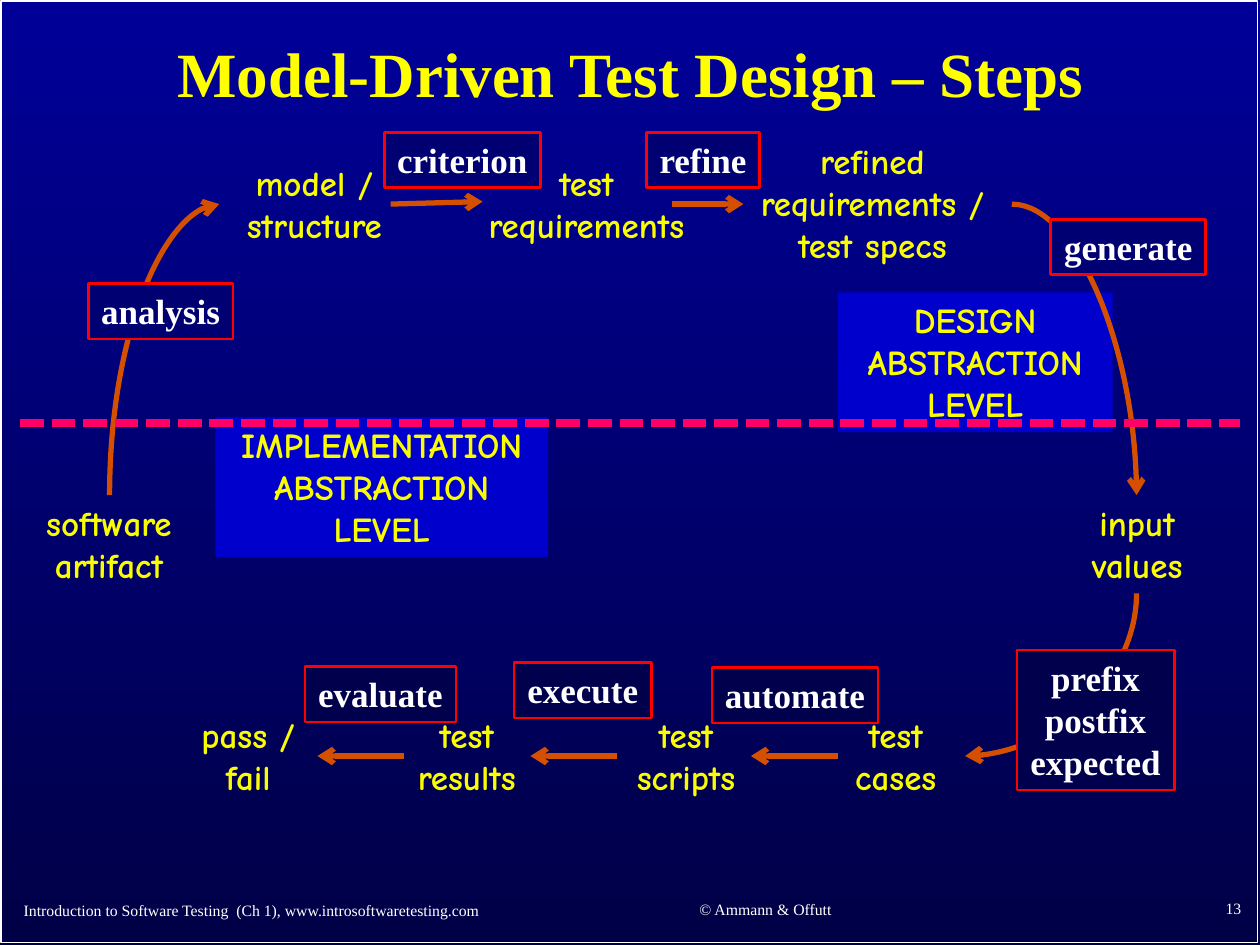
from dataclasses import dataclass

from lxml.etree import SubElement
from pptx import Presentation
from pptx.dml.color import RGBColor
from pptx.enum.dml import MSO_LINE_DASH_STYLE as Dash
from pptx.enum.shapes import MSO_CONNECTOR as Link, MSO_SHAPE as Preset
from pptx.enum.text import MSO_ANCHOR as Anchor, MSO_AUTO_SIZE as AutoSize, PP_ALIGN as Align
from pptx.oxml.ns import qn
from pptx.util import Inches, Pt


@dataclass(frozen=True)
class TextStyle:
    font: str
    size: float
    color: str
    bold: bool = True


@dataclass(frozen=True)
class Theme:
    sky_top: str = "000099"
    sky_bottom: str = "000047"
    white: str = "FFFFFF"
    arrow: str = "D45000"
    divider: str = "FF0066"
    level_fill: str = "0000CC"
    step_line: str = "FF0000"
    step_upper: str = "000073"
    step_lower: str = "00004C"
    title: TextStyle = TextStyle("Times New Roman", 36, "FFFF00")
    footer: TextStyle = TextStyle("Times New Roman", 9, "FFFFFF", False)
    artifact: TextStyle = TextStyle("Comic Neue", 20, "FAFD00")
    step: TextStyle = TextStyle("Times New Roman", 20, "FFFFFF")


@dataclass(frozen=True)
class Label:
    lines: tuple[str, ...]
    left: float
    top: float
    width: float
    height: float


@dataclass(frozen=True)
class Arrow:
    start: tuple[float, float]
    end: tuple[float, float]


THEME = Theme()
UPPER_FLOW, LOWER_FLOW = 1.62, 6.0
MIDDLE_TOP, LOWER_TOP = 3.93, 5.61
TWO_LINES, THREE_LINES, ONE_LINE = 0.77, 1.11, 0.44

ARTIFACTS = [
    Label(("software artifact",), 0.11, MIDDLE_TOP, 1.51, TWO_LINES),
    Label(("model / structure",), 1.74, 1.23, 1.51, TWO_LINES),
    Label(("test requirements",), 3.67, 1.23, 1.97, TWO_LINES),
    Label(("refined requirements / test specs",), 5.82, 1.06, 2.21, THREE_LINES),
    Label(("input values",), 8.27, MIDDLE_TOP, 1.51, TWO_LINES),
    Label(("test cases",), 6.56, LOWER_TOP, 1.1, TWO_LINES),
    Label(("test scripts",), 4.82, LOWER_TOP, 1.25, TWO_LINES),
    Label(("test results",), 3.08, LOWER_TOP, 1.25, TWO_LINES),
    Label(("pass / fail",), 1.35, LOWER_TOP, 1.24, TWO_LINES),
]
LEVELS = [
    Label(("IMPLEMENTATION", "ABSTRACTION", "LEVEL"), 1.71, 3.31, 2.64, THREE_LINES),
    Label(("DESIGN", "ABSTRACTION", "LEVEL"), 6.65, 2.32, 2.18, THREE_LINES),
]
UPPER_STEPS = [
    Label(("analysis",), 0.7, 2.25, 1.15, ONE_LINE),
    Label(("criterion",), 3.05, 1.05, 1.24, ONE_LINE),
    Label(("refine",), 5.13, 1.05, 0.9, ONE_LINE),
    Label(("generate",), 8.34, 1.74, 1.23, ONE_LINE),
]
LOWER_STEPS = [
    Label(("prefix", "postfix", "expected"), 8.07, 5.16, 1.25, THREE_LINES),
    Label(("automate",), 5.65, 5.3, 1.32, ONE_LINE),
    Label(("execute",), 4.08, 5.26, 1.09, ONE_LINE),
    Label(("evaluate",), 2.42, 5.29, 1.2, ONE_LINE),
]
STRAIGHT_ARROWS = [
    Arrow((3.1, UPPER_FLOW), (3.83, 1.6)),
    Arrow((5.33, UPPER_FLOW), (5.9, UPPER_FLOW)),
] + [Arrow((x, LOWER_FLOW), (x - 0.69, LOWER_FLOW)) for x in (3.21, 4.9, 6.65)]
ANALYSIS_ARROW = Arrow((0.87, MIDDLE_TOP), (1.74, UPPER_FLOW))
GENERATE_ARROW = Arrow((8.03, UPPER_FLOW), (9.02, MIDDLE_TOP))
PREFIX_ARROW = Arrow((9.02, 4.71), (7.66, LOWER_FLOW))
FOOTERS = [
    (Label(("Introduction to Software Testing  (Ch 1), www.introsoftwaretesting.com",),
           0.09, 7.03, 4.2, 0.38), Align.LEFT),
    (Label(("© Ammann & Offutt",), 4.49, 7.02, 3.17, 0.39), Align.CENTER),
    (Label(("13",), 7.87, 7.01, 2.08, 0.4), Align.RIGHT),
]


def rgb(color: str) -> RGBColor:
    return RGBColor.from_string(color)


def write(box, lines: tuple[str, ...], style: TextStyle, align=Align.CENTER,
          anchor=Anchor.TOP, wrap: bool = True, grow: bool = False, spacing: float = 1.0) -> None:
    frame = box.text_frame
    frame.word_wrap = wrap
    frame.vertical_anchor = anchor
    frame.auto_size = AutoSize.SHAPE_TO_FIT_TEXT if grow else AutoSize.NONE
    for index, line in enumerate(lines):
        para = frame.add_paragraph() if index else frame.paragraphs[0]
        para.alignment = align
        para.line_spacing = spacing
        span = para.add_run()
        span.text = line
        span.font.name = style.font
        span.font.size = Pt(style.size)
        span.font.bold = style.bold
        span.font.color.rgb = rgb(style.color)


def add_text(page, label: Label, style: TextStyle, **layout) -> None:
    box = page.shapes.add_textbox(Inches(label.left), Inches(label.top),
                                  Inches(label.width), Inches(label.height))
    write(box, label.lines, style, **layout)


def add_box(page, label: Label, style: TextStyle, fill: str | None = None,
            line: str | None = None, weight: float = 1.5) -> None:
    box = page.shapes.add_shape(Preset.RECTANGLE, Inches(label.left), Inches(label.top),
                                Inches(label.width), Inches(label.height))
    box.shadow.inherit = False
    if fill:
        box.fill.solid()
        box.fill.fore_color.rgb = rgb(fill)
    else:
        box.fill.background()
    if line:
        box.line.color.rgb = rgb(line)
        box.line.width = Pt(weight)
    else:
        box.line.fill.background()
    if label.lines:
        write(box, label.lines, style, wrap=False, grow=True)


def add_link(page, arrow: Arrow, color: str, weight: float, kind=Link.STRAIGHT):
    link = page.shapes.add_connector(kind, *(Inches(v) for v in arrow.start + arrow.end))
    link.line.color.rgb = rgb(color)
    link.line.width = Pt(weight)
    SubElement(link.element.spPr, qn("a:effectLst"))
    return link


def add_arrow(page, arrow: Arrow, kind=Link.STRAIGHT):
    link = add_link(page, arrow, THEME.arrow, 3, kind)
    SubElement(link.line._get_or_add_ln(), qn("a:tailEnd"), type="arrow")
    return link


def add_curve(page, arrow: Arrow, leaves_vertically: bool = False) -> None:
    """Draw a quarter bend; one that leaves vertically is laid out flat, then turned 90°."""
    if leaves_vertically:
        (x1, y1), (x2, y2) = arrow.start, arrow.end
        middle_x, middle_y = (x1 + x2) / 2, (y1 + y2) / 2
        half_x, half_y = (y2 - y1) / 2, (x1 - x2) / 2
        arrow = Arrow((middle_x - half_x, middle_y - half_y),
                      (middle_x + half_x, middle_y + half_y))
    link = add_arrow(page, arrow, Link.CURVE)
    shape_properties = link.element.spPr
    shape_properties.find(qn("a:prstGeom")).set("prst", "curvedConnector2")
    if leaves_vertically:
        shape_properties.find(qn("a:xfrm")).set("rot", str(90 * 60000))


def paint_background(page) -> None:
    fill = page.background.fill
    fill.gradient()
    fill.gradient_angle = 270
    for stop, position, color in zip(fill.gradient_stops, (0, 1),
                                     (THEME.sky_top, THEME.sky_bottom)):
        stop.position = position
        stop.color.rgb = rgb(color)


def main() -> None:
    deck = Presentation()
    deck.slide_width, deck.slide_height = Inches(10), Inches(7.5)
    page = deck.slides.add_slide(deck.slide_layouts[6])

    paint_background(page)
    add_box(page, Label((), 0.01, 0.01, 9.97, 7.47), THEME.step, line=THEME.white, weight=1)
    add_text(page, Label(("Model-Driven Test Design – Steps",), 0.1, 0.11, 9.81, 1),
             THEME.title, anchor=Anchor.MIDDLE, spacing=0.9)
    for label, align in FOOTERS:
        add_text(page, label, THEME.footer, align=align, anchor=Anchor.MIDDLE)

    for label in ARTIFACTS:
        add_text(page, label, THEME.artifact, grow=True)
    for arrow in (ANALYSIS_ARROW, PREFIX_ARROW):
        add_curve(page, arrow, leaves_vertically=True)
    for arrow in STRAIGHT_ARROWS:
        add_arrow(page, arrow)

    for label in LEVELS:
        add_box(page, label, THEME.artifact, fill=THEME.level_fill)
    add_curve(page, GENERATE_ARROW)
    divider = add_link(page, Arrow((0.16, 3.36), (9.84, 3.36)), THEME.divider, 4.5)
    divider.line.dash_style = Dash.SQUARE_DOT

    for steps, fill in ((UPPER_STEPS, THEME.step_upper), (LOWER_STEPS, THEME.step_lower)):
        for label in steps:
            add_box(page, label, THEME.step, fill, THEME.step_line)

    deck.save("out.pptx")


if __name__ == "__main__":
    main()
